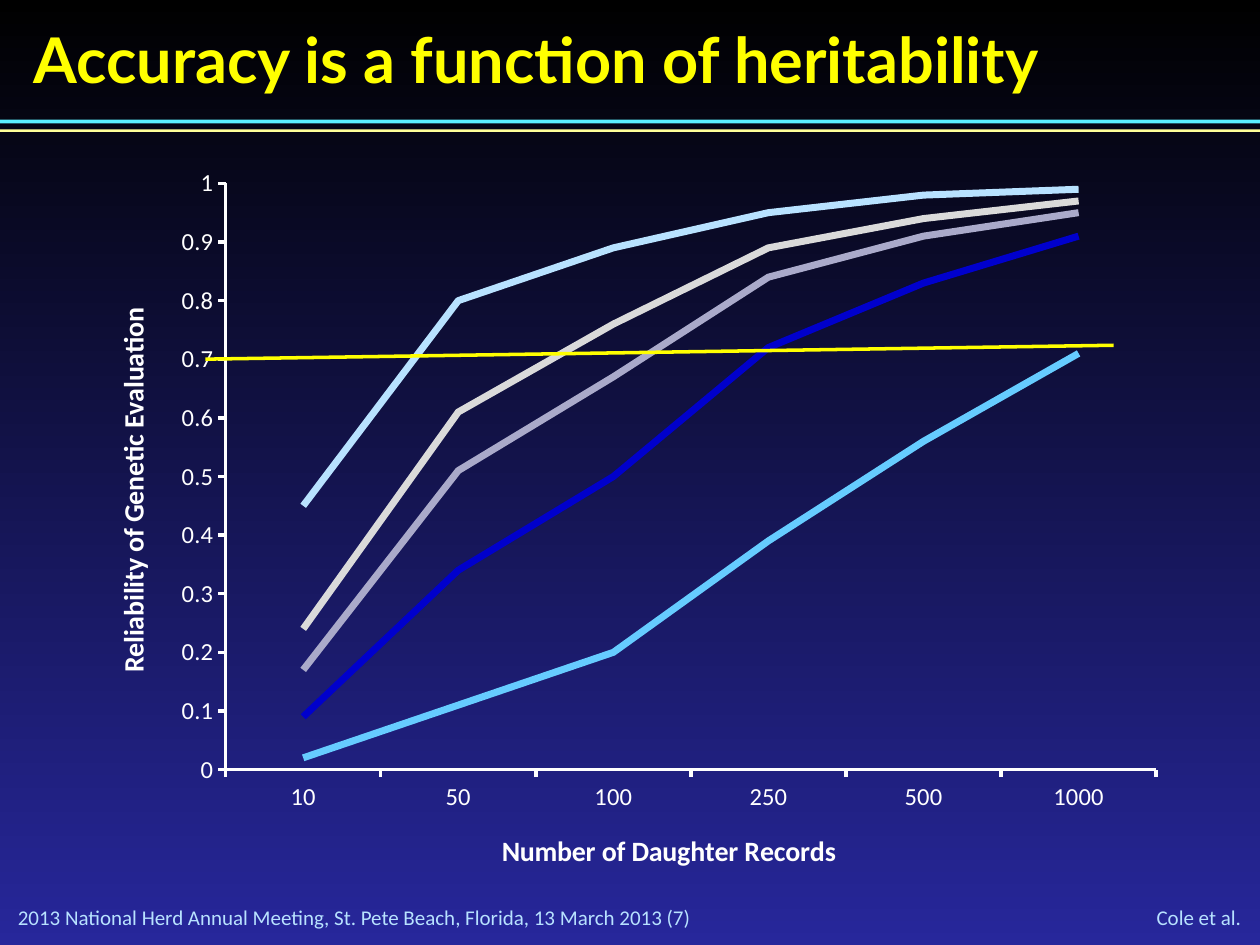
from lxml.etree import SubElement
from pptx import Presentation
from pptx.chart.data import CategoryChartData
from pptx.dml.color import RGBColor
from pptx.enum.chart import XL_CHART_TYPE, XL_TICK_MARK
from pptx.enum.shapes import MSO_CONNECTOR, MSO_SHAPE
from pptx.enum.text import MSO_ANCHOR, PP_ALIGN
from pptx.oxml.ns import qn
from pptx.util import Cm, Pt

CATS = ["10", "50", "100", "250", "500", "1000"]
ROWS = [
    ("Series 1", "66CCFF", (0.02, 0.11, 0.2, 0.39, 0.56, 0.71)),
    ("Series 2", "AAAACA", (0.17, 0.51, 0.67, 0.84, 0.91, 0.95)),
    ("Series 3", "DADADA", (0.24, 0.61, 0.76, 0.89, 0.94, 0.97)),
    ("Series 4", "B8E2FF", (0.45, 0.8, 0.89, 0.95, 0.98, 0.99)),
    ("Series 5", "0000CC", (0.09, 0.34, 0.5, 0.72, 0.83, 0.91)),
]


def tint(color, code):
    """Set a colour from a hex string."""
    color.rgb = RGBColor.from_string(code)


def style(font, size, code, face="Calibri", bold=False):
    """Set the face, size, weight and colour of a font."""
    font.name, font.size, font.bold = face, Pt(size), bold
    tint(font.color, code)


def text(slide, box, words, size, code, face="Calibri", bold=False,
         align=PP_ALIGN.LEFT, pad=(0, 0)):
    """Place one line of text in a box."""
    frame = slide.shapes.add_textbox(*map(Cm, box)).text_frame
    frame.word_wrap = True
    frame.vertical_anchor = MSO_ANCHOR.MIDDLE
    frame.margin_left = frame.margin_right = Cm(pad[0])
    frame.margin_top = frame.margin_bottom = Cm(pad[1])
    para = frame.paragraphs[0]
    para.alignment = align
    run = para.add_run()
    run.text = words
    style(run.font, size, code, face, bold)


def backdrop(slide):
    """Fill the slide from black down to blue."""
    fill = slide.background.fill
    fill.gradient()
    fill.gradient_angle = 270
    for stop, place, code in zip(fill.gradient_stops, (0, 1), ("000000", "27279B")):
        stop.position = place
        tint(stop.color, code)


def header(slide, box):
    """Draw the title and the two rules under it."""
    left, top, width, height = box
    text(slide, (left + 0.43, top + 0.28, width - 0.86, 1.78),
         "Accuracy is a function of heritability", 36, "FFFF00", "Lato", True,
         pad=(0.25, 0.13))
    for drop, thick, code in ((0.25, 0.08, "5BEFFF"), (0.05, 0.05, "FFFF99")):
        bar = slide.shapes.add_shape(MSO_SHAPE.RECTANGLE, Cm(left),
                                     Cm(top + height - drop), Cm(width), Cm(thick))
        bar.shadow.inherit = False
        bar.fill.solid()
        tint(bar.fill.fore_color, code)
        bar.line.fill.background()


def footer(slide, box):
    """Write the event on the left and the authors on the right."""
    left, top, width, height = box
    text(slide, (left, top, 14.68, height),
         "2013 National Herd Annual Meeting, St. Pete Beach, Florida, 13 March 2013 (7)",
         12, "B8E2FF")
    text(slide, (left + width - 2.87, top, 2.87, height), "Cole et al.",
         12, "B8E2FF", align=PP_ALIGN.RIGHT)


def dress(axis, title):
    """Give an axis its title, line, ticks and labels."""
    axis.has_major_gridlines = False
    axis.major_tick_mark = XL_TICK_MARK.OUTSIDE
    axis.minor_tick_mark = XL_TICK_MARK.NONE
    axis.format.line.width = Pt(2)
    tint(axis.format.line.color, "FFFFFF")
    style(axis.tick_labels.font, 14, "FFFFFF")
    run = axis.axis_title.text_frame.paragraphs[0].add_run()
    run.text = title
    style(run.font, 16, "FFFFFF", bold=True)


def frame_plot(chart, x, y, w, h):
    """Fix the inner plot area as shares of the chart."""
    area = chart.plots[0]._element.getparent()
    layout = area.find(qn("c:layout"))
    if layout is None:
        layout = SubElement(area, qn("c:layout"))
        area.insert(0, layout)
    manual = SubElement(layout, qn("c:manualLayout"))
    parts = dict(layoutTarget="inner", xMode="edge", yMode="edge", x=x, y=y, w=w, h=h)
    for tag, value in parts.items():
        SubElement(manual, qn(f"c:{tag}")).set("val", str(value))


def graph(slide, box):
    """Draw the line chart and the mark across it."""
    left, top, width, height = box
    data = CategoryChartData()
    data.categories = CATS
    for name, code, values in ROWS:
        data.add_series(name, values)
    chart = slide.shapes.add_chart(XL_CHART_TYPE.LINE, *map(Cm, box), data).chart
    style(chart.font, 10, "FFFFFF")
    chart.has_legend = chart.has_title = False
    chart.plots[0].vary_by_categories = False
    for line, (name, code, values) in zip(chart.plots[0].series, ROWS):
        line.smooth = False
        line.format.line.width = Pt(4)
        tint(line.format.line.color, code)
    dress(chart.category_axis, "Number of Daughter Records")
    scale = chart.value_axis
    dress(scale, "Reliability of Genetic Evaluation")
    scale.minimum_scale, scale.maximum_scale, scale.major_unit = 0, 1, 0.1
    scale.tick_labels.number_format = "General"
    scale.tick_labels.number_format_is_linked = False
    frame_plot(chart, 0.13, 0.04, 0.85, 0.79)

    mark = slide.shapes.add_connector(
        MSO_CONNECTOR.STRAIGHT, Cm(left + 2.46), Cm(top + 4.14),
        Cm(left + width - 1.3), Cm(top + 3.86))
    mark.line.width = Pt(2)
    tint(mark.line.color, "FFFF00")
    SubElement(mark._element.spPr, qn("a:effectLst"))


def main():
    """Build the slide and save it."""
    deck = Presentation()
    deck.slide_width, deck.slide_height = Cm(25.4), Cm(19.05)
    slide = deck.slides.add_slide(deck.slide_layouts[6])
    backdrop(slide)
    footer(slide, (0.36, 18.22, 24.66, 0.52))
    graph(slide, (1.68, 3.1, 22.07, 14.96))
    header(slide, (0, 0, 25.4, 2.66))
    deck.save("out.pptx")


if __name__ == "__main__":
    main()
